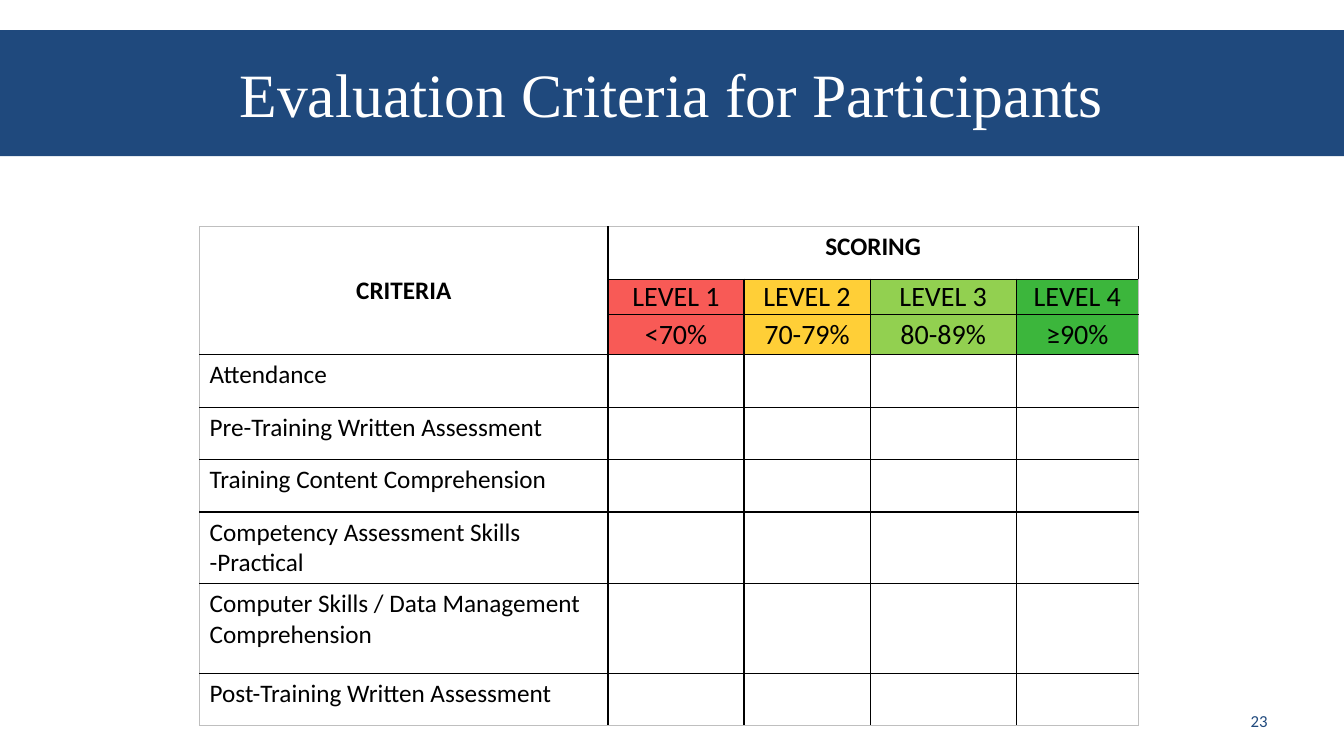
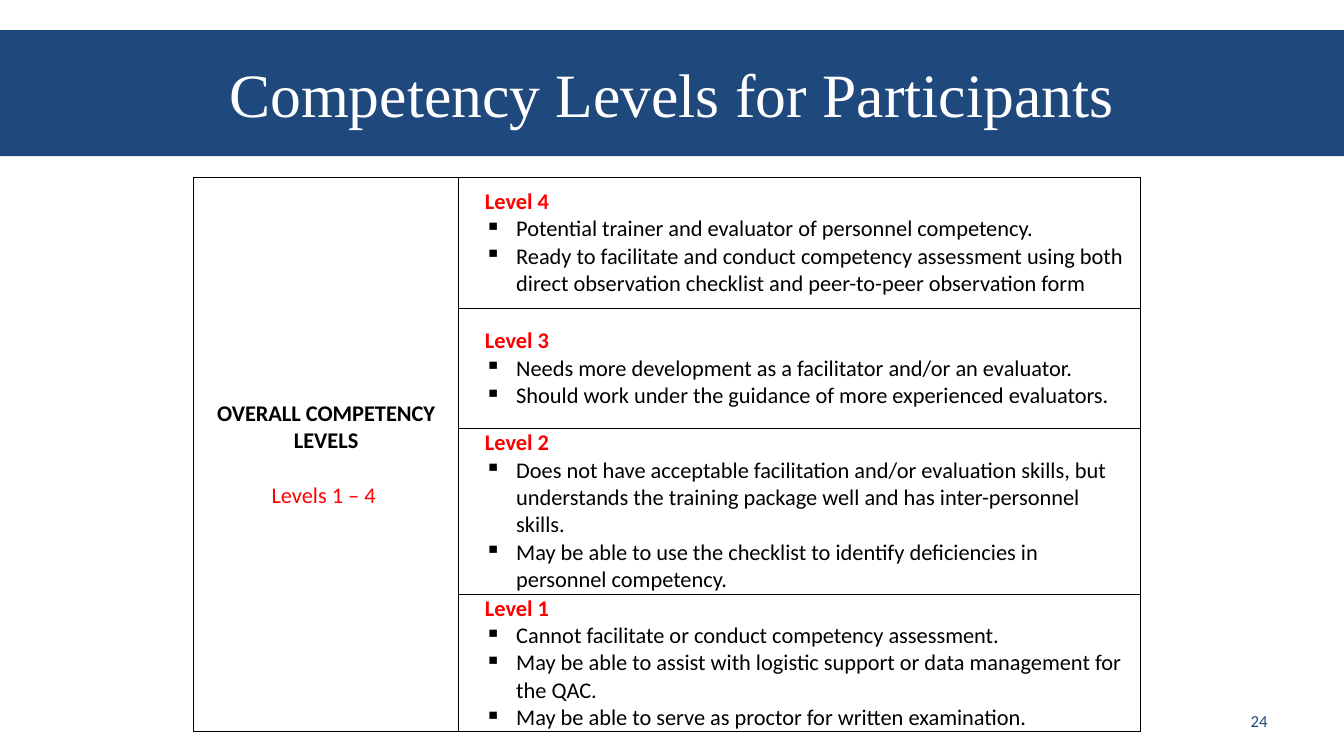
"""Build two slides on scoring the participants of a training."""
import lxml.etree
import pptx
import pptx.dml.color
import pptx.enum.shapes
import pptx.enum.text
import pptx.oxml.ns
import pptx.util

Inches = pptx.util.Inches
Pt = pptx.util.Pt
RGBColor = pptx.dml.color.RGBColor
ALIGN = pptx.enum.text.PP_ALIGN
ANCHOR = pptx.enum.text.MSO_ANCHOR
qn = pptx.oxml.ns.qn

NAVY = RGBColor(0x1F, 0x49, 0x7D)
WHITE = RGBColor(0xFF, 0xFF, 0xFF)
BLACK = RGBColor(0, 0, 0)
GREY = RGBColor(0xBF, 0xBF, 0xBF)
RED = RGBColor(0xFF, 0, 0)
CORAL = RGBColor(0xF8, 0x5A, 0x56)
AMBER = RGBColor(0xFF, 0xCF, 0x37)
LIME = RGBColor(0x92, 0xD0, 0x50)
GREEN = RGBColor(0x3C, 0xB6, 0x3C)

SCORES = [
    ("LEVEL 1", "<70%", CORAL),
    ("LEVEL 2", "70-79%", AMBER),
    ("LEVEL 3", "80-89%", LIME),
    ("LEVEL 4", "≥90%", GREEN),
]
CRITERIA = [
    "Attendance",
    "Pre-Training Written Assessment",
    "Training Content Comprehension",
    "Competency Assessment Skills -Practical",
    "Computer Skills / Data Management Comprehension",
    "Post-Training Written Assessment",
]
LEVELS = [
    ("Level 4", [
        "Potential trainer and evaluator of personnel competency.",
        "Ready to facilitate and conduct competency assessment using both "
        "direct observation checklist and peer-to-peer observation form",
    ]),
    ("Level 3", [
        "Needs more development as a facilitator and/or an evaluator.",
        "Should work under the guidance of more experienced evaluators.",
    ]),
    ("Level 2", [
        "Does not have acceptable facilitation and/or evaluation skills, but "
        "understands the training package well and has inter-personnel skills.",
        "May be able to use the checklist to identify deficiencies in "
        "personnel competency.",
    ]),
    ("Level 1", [
        "Cannot facilitate or conduct competency assessment.",
        "May be able to assist with logistic support or data management for the QAC.",
        "May be able to serve as proctor for written examination.",
    ]),
]


class Deck:
    body_font = "Calibri"
    title_font = "Times New Roman"

    def __init__(self):
        self.show = pptx.Presentation()
        self.show.slide_width = Inches(13.33)
        self.show.slide_height = Inches(7.5)
        self.slide = None

    def add_slide(self, title, number):
        self.slide = self.show.slides.add_slide(self.show.slide_layouts[6])
        band = self.slide.shapes.add_shape(
            pptx.enum.shapes.MSO_SHAPE.RECTANGLE,
            0, Inches(0.3), Inches(13.33), Inches(1.25))
        band.shadow.inherit = False
        band.fill.solid()
        band.fill.fore_color.rgb = NAVY
        band.line.fill.background()
        band.text_frame.vertical_anchor = ANCHOR.MIDDLE
        self.add_text(band.text_frame, title, 44, WHITE, ALIGN.CENTER,
                      font=self.title_font)
        footer = self.slide.shapes.add_textbox(
            Inches(9.56), Inches(6.95), Inches(3.11), Inches(0.4))
        footer.text_frame.word_wrap = True
        footer.text_frame.vertical_anchor = ANCHOR.MIDDLE
        self.add_text(footer.text_frame, str(number), 12, NAVY, ALIGN.RIGHT)

    def add_text(self, frame, text, size, color=BLACK, align=ALIGN.LEFT,
                 bold=False, font=body_font):
        paragraph = frame.paragraphs[0]
        if paragraph.runs:
            paragraph = frame.add_paragraph()
        paragraph.alignment = align
        run = paragraph.add_run()
        run.text = text
        run.font.size = Pt(size)
        run.font.name = font
        run.font.bold = bold
        run.font.color.rgb = color
        return paragraph

    def indent(self, paragraph, left, hanging=0, bullet=None):
        properties = paragraph._p.get_or_add_pPr()
        properties.set("marL", str(Inches(left)))
        properties.set("indent", str(-Inches(hanging)))
        if bullet:
            lxml.etree.SubElement(properties, qn("a:buChar"), char=bullet)

    def add_table(self, left, top, widths, heights, outline):
        grid = self.slide.shapes.add_table(
            len(heights), len(widths), Inches(left), Inches(top),
            Inches(sum(widths)), Inches(sum(heights))).table
        grid.first_row = grid.horz_banding = False
        for column, width in zip(grid.columns, widths):
            column.width = Inches(width)
        for row, height in zip(grid.rows, heights):
            row.height = Inches(height)
        last_row, last_column = len(heights) - 1, len(widths) - 1
        for r, row in enumerate(grid.rows):
            for c, cell in enumerate(row.cells):
                self.paint(cell, WHITE)
                outer = (c == 0, c == last_column, r == 0, r == last_row)
                self.border(cell, [outline if edge else BLACK for edge in outer])
        return grid

    def paint(self, cell, color):
        cell.fill.solid()
        cell.fill.fore_color.rgb = color

    def border(self, cell, colors):
        properties = cell._tc.get_or_add_tcPr()
        for place, (side, color) in enumerate(zip("LRTB", colors)):
            line = lxml.etree.Element(qn("a:ln" + side), w=str(Pt(1)))
            fill = lxml.etree.SubElement(line, qn("a:solidFill"))
            lxml.etree.SubElement(fill, qn("a:srgbClr"), val=str(color))
            properties.insert(place, line)

    def tighten(self, cell):
        cell.vertical_anchor = ANCHOR.MIDDLE
        cell.margin_left = cell.margin_right = Inches(0.07)
        cell.margin_top = cell.margin_bottom = 0


def add_criteria(deck):
    deck.add_slide("Evaluation Criteria for Participants", 23)
    scoring = deck.add_table(
        1.98, 2.25, [4.05, 1.35, 1.25, 1.45, 1.21],
        [0.52, 0.35, 0.4, 0.52, 0.52, 0.52, 0.71, 0.89, 0.52], GREY)
    scoring.cell(0, 0).merge(scoring.cell(2, 0))
    scoring.cell(0, 1).merge(scoring.cell(0, 4))
    scoring.cell(0, 0).vertical_anchor = ANCHOR.MIDDLE
    for column, heading in enumerate(["CRITERIA", "SCORING"]):
        deck.add_text(scoring.cell(0, column).text_frame, heading, 18,
                      align=ALIGN.CENTER, bold=True)
    for column, (level, percent, color) in enumerate(SCORES, 1):
        for row, label in enumerate([level, percent], 1):
            score = scoring.cell(row, column)
            deck.paint(score, color)
            deck.tighten(score)
            deck.add_text(score.text_frame, label, 20, align=ALIGN.CENTER)
    for row in (1, 2):
        deck.tighten(scoring.cell(row, 0))
    for row, criterion in enumerate(CRITERIA, 3):
        deck.add_text(scoring.cell(row, 0).text_frame, criterion, 18)


def add_levels(deck):
    deck.add_slide("Competency Levels for Participants", 24)
    levels = deck.add_table(1.92, 1.76, [2.63, 6.76],
                            [1.3, 1.19, 1.65, 1.36], BLACK)
    overall = levels.cell(0, 0)
    overall.merge(levels.cell(3, 0))
    deck.tighten(overall)
    deck.add_text(overall.text_frame, "OVERALL COMPETENCY LEVELS", 16,
                  align=ALIGN.CENTER, bold=True)
    level_range = deck.add_text(overall.text_frame, "Levels 1 – 4 ", 16, RED,
                                ALIGN.CENTER)
    level_range.space_before = Pt(19.5)
    for row, (level, abilities) in enumerate(LEVELS):
        description = levels.cell(row, 1)
        deck.tighten(description)
        frame = description.text_frame
        deck.indent(deck.add_text(frame, level, 16, RED, bold=True), 0.19)
        for ability in abilities:
            deck.indent(deck.add_text(frame, ability, 16), 0.5, 0.31, "▪")


def main():
    deck = Deck()
    add_criteria(deck)
    add_levels(deck)
    deck.show.save("out.pptx")


if __name__ == "__main__":
    main()
